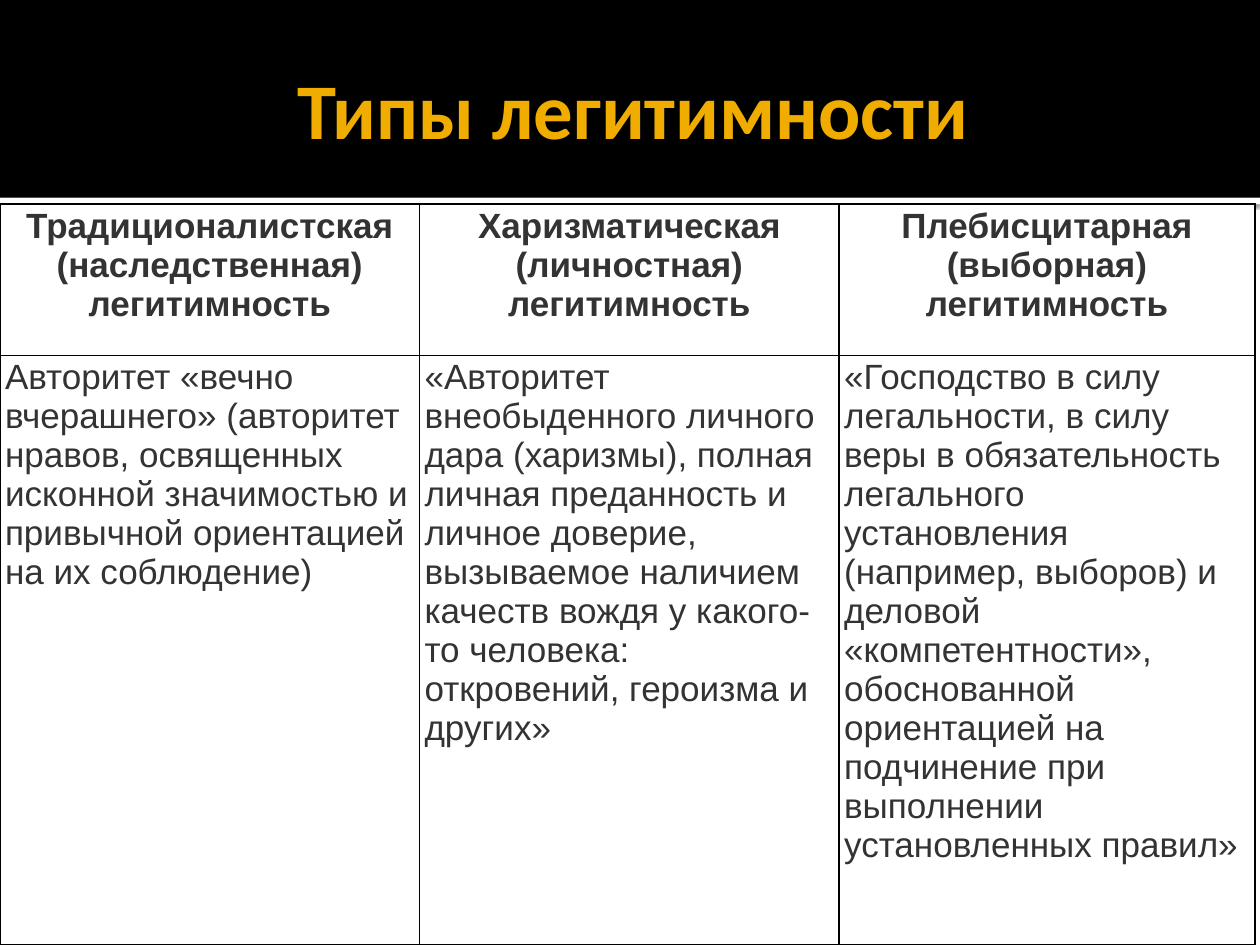
from lxml.etree import SubElement
from pptx import Presentation
from pptx.dml.color import RGBColor
from pptx.enum.shapes import MSO_SHAPE
from pptx.enum.text import MSO_ANCHOR, PP_ALIGN
from pptx.oxml import parse_xml
from pptx.oxml.ns import nsdecls, qn
from pptx.util import Inches, Pt

BLACK = RGBColor(0x00, 0x00, 0x00)
WHITE = RGBColor(0xFF, 0xFF, 0xFF)
GOLD = RGBColor(0xF0, 0xAD, 0x00)
GRAY = RGBColor(0x33, 0x33, 0x33)

TITLE = "Типы легитимности"
LEGITIMACY_TYPES = [
    (
        ["Традиционалистская (наследственная)", "легитимность"],
        "Авторитет «вечно вчерашнего» (авторитет нравов, освященных исконной "
        "значимостью и привычной ориентацией на их соблюдение)",
    ),
    (
        ["Харизматическая", "(личностная)", "легитимность"],
        "«Авторитет внеобыденного личного дара (харизмы), полная личная "
        "преданность и личное доверие, вызываемое наличием качеств вождя у "
        "какого-то человека: откровений, героизма и других»",
    ),
    (
        ["Плебисцитарная", "(выборная)", "легитимность"],
        "«Господство в силу легальности, в силу веры в обязательность "
        "легального установления (например, выборов) и деловой "
        "«компетентности», обоснованной ориентацией на подчинение при "
        "выполнении установленных правил»",
    ),
]
COLUMN_WIDTHS = [3.33, 3.33, 3.3]
ROW_HEIGHTS = [1.2, 4.68]
BANNER_HEIGHT = 1.57
STRIP_HEIGHT = 0.05


def write_text(text_frame, lines, size=20, font="Arial", color=GRAY,
               bold=False, align=PP_ALIGN.LEFT):
    for index, line in enumerate(lines):
        paragraph = text_frame.paragraphs[0] if index == 0 else text_frame.add_paragraph()
        paragraph.alignment = align
        run = paragraph.add_run()
        run.text = line
        run.font.size = Pt(size)
        run.font.name = font
        run.font.bold = bold
        run.font.color.rgb = color


def add_band(slide, top, height, color):
    band = slide.shapes.add_shape(
        MSO_SHAPE.RECTANGLE, 0, Inches(top), Inches(10), Inches(height))
    band.shadow.inherit = False
    band.fill.solid()
    band.fill.fore_color.rgb = color
    band.line.fill.background()
    return band


def add_shadow(shape):
    effects = shape.element.spPr.find(qn("a:effectLst"))
    effects.append(parse_xml(
        f'<a:outerShdw {nsdecls("a")} blurRad="{Pt(2.5)}" dist="{Pt(0.8)}" '
        'dir="5400000" rotWithShape="0"><a:srgbClr val="000000">'
        '<a:alpha val="60000"/></a:srgbClr></a:outerShdw>'))


def add_borders(cell):
    properties = cell._tc.get_or_add_tcPr()
    for index, side in enumerate(("lnL", "lnR", "lnT", "lnB")):
        border = parse_xml(f'<a:{side} {nsdecls("a")} w="{Pt(1)}"/>')
        fill = SubElement(border, qn("a:solidFill"))
        SubElement(fill, qn("a:srgbClr"), val=str(BLACK))
        properties.insert(index, border)


def format_cell(cell, lines, **text_format):
    cell.margin_left = cell.margin_right = Inches(0.04)
    cell.margin_top = cell.margin_bottom = Inches(0.02)
    cell.vertical_anchor = MSO_ANCHOR.TOP
    cell.fill.solid()
    cell.fill.fore_color.rgb = WHITE
    add_borders(cell)
    write_text(cell.text_frame, lines, **text_format)


def add_title(slide):
    title = slide.shapes.title
    title.left, title.top = Inches(0.5), Inches(0.17)
    title.width, title.height = Inches(9), Inches(1.37)
    frame = title.text_frame
    frame.margin_left = Inches(0.1)
    frame.margin_right = frame.margin_top = frame.margin_bottom = Inches(0.05)
    frame.vertical_anchor = MSO_ANCHOR.MIDDLE
    write_text(frame, [TITLE], size=45, font="Calibri", color=GOLD,
               bold=True, align=PP_ALIGN.CENTER)
    title.element.getparent().append(title.element)


def add_types_table(slide):
    table = slide.shapes.add_table(
        len(ROW_HEIGHTS), len(COLUMN_WIDTHS),
        0, Inches(BANNER_HEIGHT + STRIP_HEIGHT),
        Inches(sum(COLUMN_WIDTHS)), Inches(sum(ROW_HEIGHTS))).table
    table.first_row = table.horz_banding = False
    for row, height in zip(table.rows, ROW_HEIGHTS):
        row.height = Inches(height)
    for index, (heading, description) in enumerate(LEGITIMACY_TYPES):
        table.columns[index].width = Inches(COLUMN_WIDTHS[index])
        format_cell(table.cell(0, index), heading, bold=True, align=PP_ALIGN.CENTER)
        format_cell(table.cell(1, index), [description])


def main():
    presentation = Presentation()
    presentation.slide_width, presentation.slide_height = Inches(10), Inches(7.5)
    slide = presentation.slides.add_slide(presentation.slide_layouts[5])
    slide.background.fill.solid()
    slide.background.fill.fore_color.rgb = WHITE
    add_shadow(add_band(slide, BANNER_HEIGHT, STRIP_HEIGHT, WHITE))
    add_band(slide, 0, BANNER_HEIGHT, BLACK)
    add_title(slide)
    add_types_table(slide)
    presentation.save("out.pptx")


if __name__ == "__main__":
    main()
